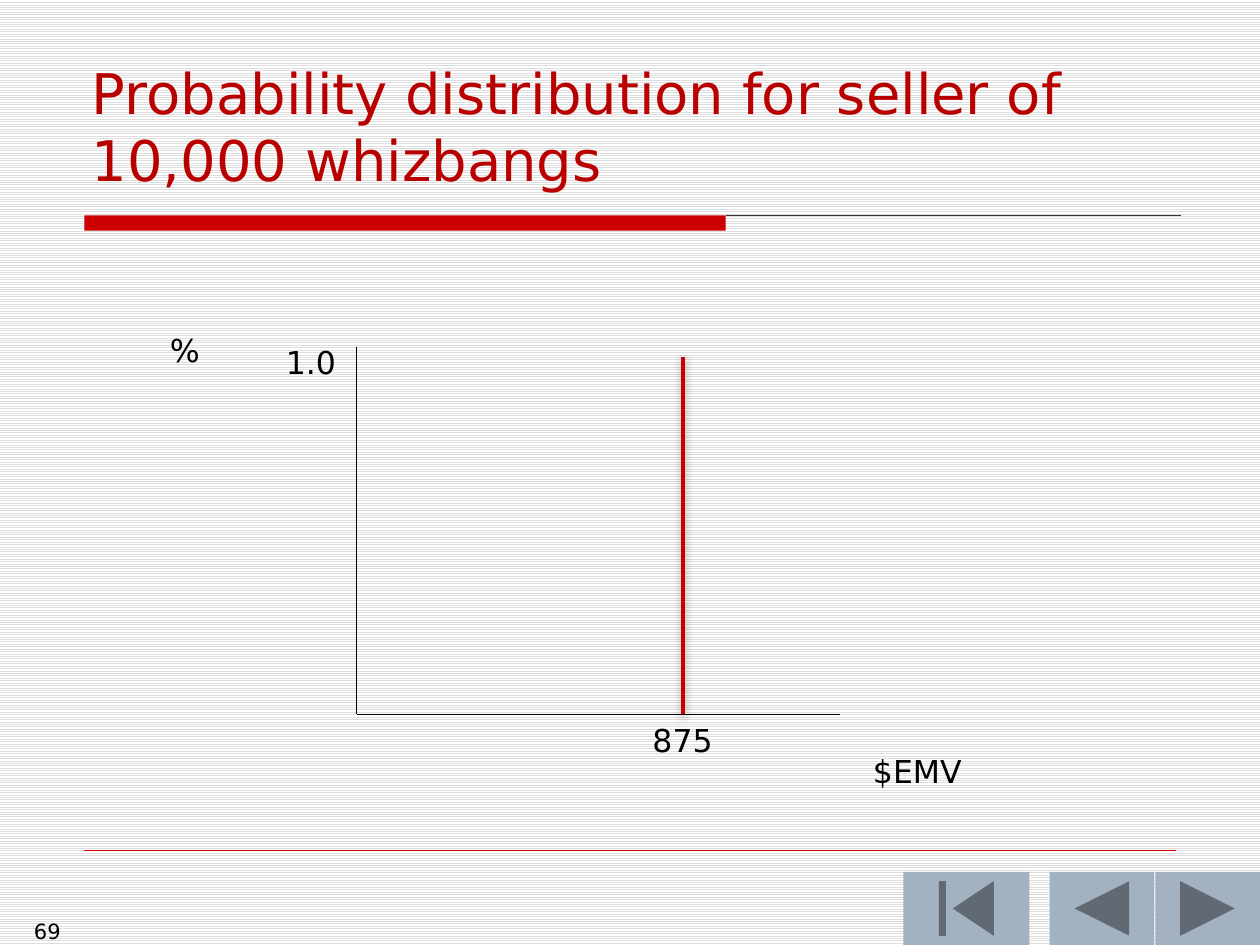
from dataclasses import dataclass

from lxml.etree import SubElement
from pptx import Presentation
from pptx.dml.color import RGBColor
from pptx.enum.dml import MSO_PATTERN
from pptx.enum.shapes import MSO_CONNECTOR, MSO_SHAPE as Shape
from pptx.enum.text import MSO_ANCHOR as Anchor, PP_ALIGN as Align
from pptx.oxml.ns import qn
from pptx.util import Inches, Pt

FONT = "DejaVu Sans"
BLACK, RED, TITLE_RED = "000000", "CC0000", "B90000"
BUTTON_FILL, RULE_DARK = "A3B2C1", "333333"

ORIGIN_X, ORIGIN_Y = 2.83, 5.67
VALUE_X = 5.42
BUTTON_TOP, BUTTON_HEIGHT = 6.92, 0.58


@dataclass(frozen=True)
class Line:
    start: tuple[float, float]
    end: tuple[float, float]
    color: str
    weight: float
    shadow: bool = False


@dataclass(frozen=True)
class Button:
    kind: Shape
    left: float
    width: float


@dataclass(frozen=True)
class Label:
    text: str
    left: float
    top: float
    width: float
    height: float = 0.4
    wrap: bool = True


LINES = [
    Line((5.76, 1.71), (9.37, 1.71), RULE_DARK, 0.75),
    Line((0.67, 6.75), (9.33, 6.75), RED, 0.25),
    Line((ORIGIN_X, 2.75), (ORIGIN_X, ORIGIN_Y), BLACK, 0.75),
    Line((ORIGIN_X, ORIGIN_Y), (6.67, ORIGIN_Y), BLACK, 0.75),
    Line((VALUE_X, ORIGIN_Y), (VALUE_X, 2.83), RED, 2, shadow=True),
]
BUTTONS = [
    Button(Shape.ACTION_BUTTON_BACK_OR_PREVIOUS, 8.33, 0.83),
    Button(Shape.ACTION_BUTTON_BEGINNING, 7.17, 1),
    Button(Shape.ACTION_BUTTON_FORWARD_OR_NEXT, 9.17, 0.83),
]
LABELS = [
    Label("$EMV", 6.83, 5.92, 0.91, wrap=False),
    Label("875", 5.08, ORIGIN_Y, 1.08, 0.42),
    Label("%", 1.25, 2.58, 0.5),
    Label("1.0", 2.17, 2.67, 0.62),
]


def rgb(value: str) -> RGBColor:
    return RGBColor.from_string(value)


def add_text(page, text: str, left: float, top: float, width: float, height: float, *,
             size: float = 18, color: str = BLACK, align=Align.LEFT,
             anchor=Anchor.TOP, wrap: bool = True) -> None:
    box = page.shapes.add_textbox(Inches(left), Inches(top), Inches(width), Inches(height))
    frame = box.text_frame
    frame.word_wrap = wrap
    frame.vertical_anchor = anchor
    para = frame.paragraphs[0]
    para.alignment = align
    span = para.add_run()
    span.text = text
    span.font.name = FONT
    span.font.size = Pt(size)
    span.font.color.rgb = rgb(color)


def add_block(page, kind: Shape, left: float, top: float, width: float, height: float,
              color: str) -> None:
    """Draw a flat preset shape with neither outline nor shadow."""
    block = page.shapes.add_shape(kind, Inches(left), Inches(top), Inches(width), Inches(height))
    block.shadow.inherit = False
    block.fill.solid()
    block.fill.fore_color.rgb = rgb(color)
    block.line.fill.background()


def add_line(page, line: Line) -> None:
    ends = [Inches(value) for value in line.start + line.end]
    connector = page.shapes.add_connector(MSO_CONNECTOR.STRAIGHT, *ends)
    connector.line.color.rgb = rgb(line.color)
    connector.line.width = Pt(line.weight)
    effects = SubElement(connector._element.spPr, qn("a:effectLst"))
    if line.shadow:
        shadow = SubElement(effects, qn("a:outerShdw"), blurRad=str(Pt(5)),
                            dist=str(Pt(1.6)), dir="5400000", rotWithShape="0")
        tint = SubElement(shadow, qn("a:srgbClr"), val=BLACK)
        SubElement(tint, qn("a:alpha"), val="38000")


def set_background(page) -> None:
    fill = page.background.fill
    fill.patterned()
    fill.pattern = MSO_PATTERN.LIGHT_HORIZONTAL
    fill.fore_color.rgb = rgb("DDDDDD")
    fill.back_color.rgb = rgb("FFFFFF")


def main() -> None:
    deck = Presentation()
    deck.slide_width, deck.slide_height = Inches(10), Inches(7.5)
    page = deck.slides.add_slide(deck.slide_layouts[6])
    set_background(page)

    add_block(page, Shape.RECTANGLE, 0.67, 1.71, 5.09, 0.12, RED)
    for button in BUTTONS:
        add_block(page, button.kind, button.left, BUTTON_TOP, button.width,
                  BUTTON_HEIGHT, BUTTON_FILL)

    add_text(page, "Probability distribution for seller of 10,000 whizbangs",
             0.63, 0.33, 9.37, 1.25, size=32, color=TITLE_RED, anchor=Anchor.BOTTOM)
    add_text(page, "69", 0, 7.24, 0.58, 0.26, size=12, align=Align.RIGHT)
    for label in LABELS:
        add_text(page, label.text, label.left, label.top, label.width, label.height,
                 wrap=label.wrap)
    for line in LINES:
        add_line(page, line)

    deck.save("out.pptx")


if __name__ == "__main__":
    main()
